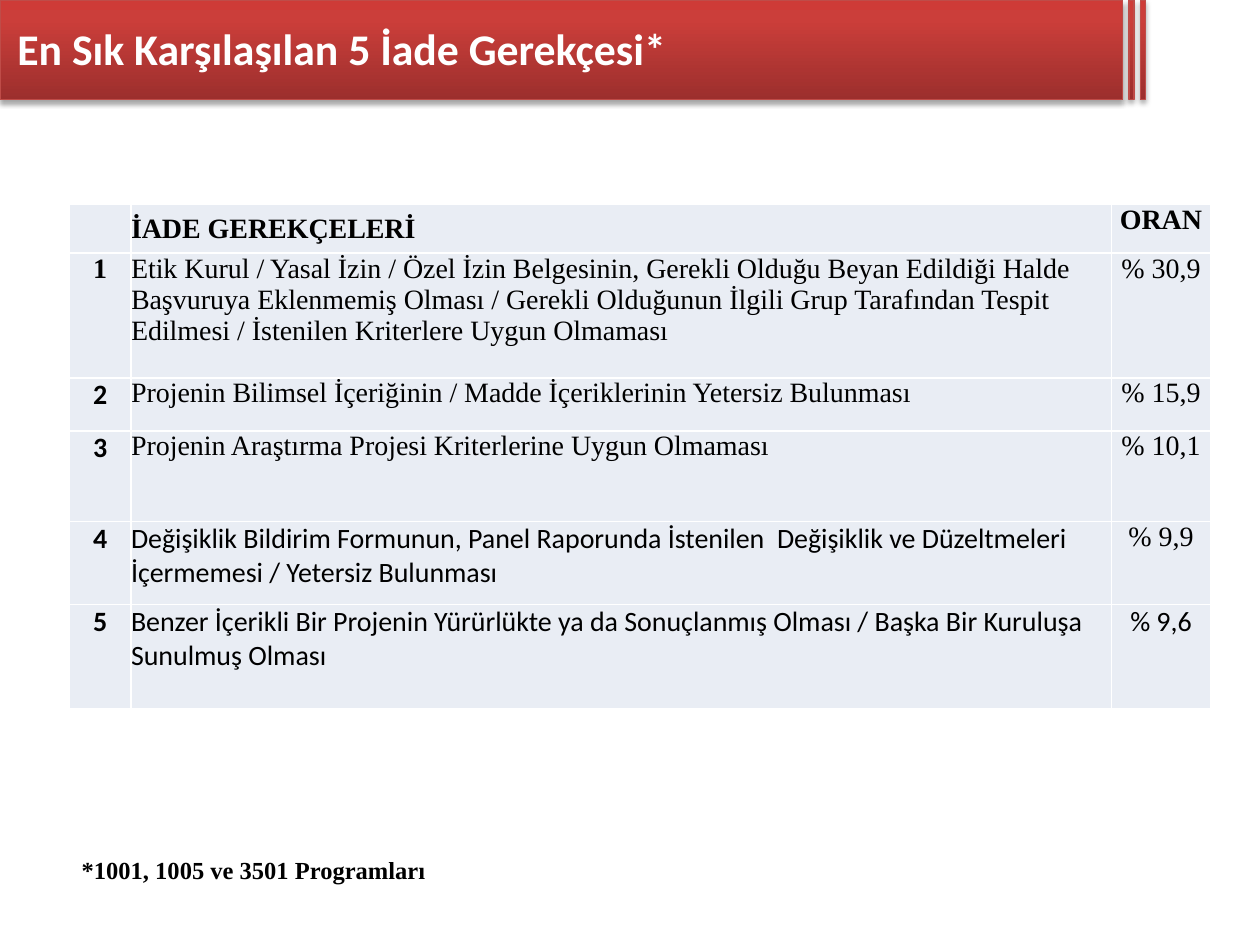
import pptx
import pptx.dml.color
import pptx.enum.shapes
import pptx.enum.text
import pptx.oxml
import pptx.oxml.ns
import pptx.util

Inches = pptx.util.Inches
Pt = pptx.util.Pt
Align = pptx.enum.text.PP_ALIGN
Anchor = pptx.enum.text.MSO_ANCHOR

THEME = {
    "sans": "Calibri", "serif": "Times New Roman",
    "title_size": 25, "table_size": 16, "note_size": 14,
    "title_color": "FFFFFF", "text_color": "000000",
    "cell_fill": "E9EDF4", "border": "FFFFFF", "band_line": "BF4C48",
    "band_stops": [(0, "9C2F2D"), (80, "CB3E3A"), (100, "CE3B37")],
}
SANS, SERIF = THEME["sans"], THEME["serif"]

# Content: each table cell is (text, font, bold)
TITLE = "En Sık Karşılaşılan 5 İade Gerekçesi*"
NOTE = "*1001, 1005 ve 3501 Programları"
ROWS = [
    [("", SERIF, True), ("İADE GEREKÇELERİ", SERIF, True), ("ORAN", SERIF, True)],
    [("1", SERIF, True),
     ("Etik Kurul / Yasal İzin / Özel İzin Belgesinin, Gerekli Olduğu Beyan Edildiği Halde "
      "Başvuruya Eklenmemiş Olması / Gerekli Olduğunun İlgili Grup Tarafından Tespit "
      "Edilmesi / İstenilen Kriterlere Uygun Olmaması", SERIF, False),
     ("% 30,9", SERIF, False)],
    [("2", SANS, True),
     ("Projenin Bilimsel İçeriğinin / Madde İçeriklerinin Yetersiz Bulunması", SERIF, False),
     ("% 15,9", SERIF, False)],
    [("3", SANS, True),
     ("Projenin Araştırma Projesi Kriterlerine Uygun Olmaması", SERIF, False),
     ("% 10,1", SERIF, False)],
    [("4", SANS, True),
     ("Değişiklik Bildirim Formunun, Panel Raporunda İstenilen  Değişiklik ve Düzeltmeleri "
      "İçermemesi / Yetersiz Bulunması", SANS, False),
     ("% 9,9", SERIF, False)],
    [("5", SANS, True),
     ("Benzer İçerikli Bir Projenin Yürürlükte ya da Sonuçlanmış Olması / Başka Bir Kuruluşa "
      "Sunulmuş Olması", SANS, False),
     ("% 9,6", SANS, False)],
]
COLUMN_WIDTHS = [0.49, 7.78, 0.79]
COLUMN_ALIGNMENTS = [Align.CENTER, Align.LEFT, Align.CENTER]
ROW_HEIGHTS = [0.39, 0.99, 0.42, 0.72, 0.66, 0.83]
BANDS = [(0, 8.91), (8.96, 0.04), (9.05, 0.04)]  # left, width
BAND_HEIGHT = 0.79
LEFT = 0.55


def rgb(value):
    return pptx.dml.color.RGBColor.from_string(value)


def element(xml):
    return pptx.oxml.parse_xml(xml.replace(">", " " + pptx.oxml.ns.nsdecls("a") + ">", 1))


def write(text_frame, text, font, size, color, bold, alignment=Align.LEFT):
    paragraph = text_frame.paragraphs[0]
    paragraph.alignment = alignment
    values = {"name": font, "size": Pt(size), "bold": bold}
    if text:
        target = paragraph.add_run()
        target.text = text
    else:
        target = paragraph
    for name, value in values.items():
        setattr(target.font, name, value)
    target.font.color.rgb = rgb(color)


def add_band(slide, left, width):
    shape = slide.shapes.add_shape(
        pptx.enum.shapes.MSO_SHAPE.RECTANGLE,
        Inches(left), 0, Inches(width), Inches(BAND_HEIGHT))
    shape.line.color.rgb = rgb(THEME["band_line"])
    shape.line.width = Pt(0.75)
    shape.shadow.inherit = False
    properties = shape._element.spPr
    # Three-stop gradient running from bottom to top
    stops = "".join(
        f'<a:gs pos="{position * 1000}"><a:srgbClr val="{color}"/></a:gs>'
        for position, color in THEME["band_stops"])
    properties.find(pptx.oxml.ns.qn("a:prstGeom")).addnext(element(
        f'<a:gradFill><a:gsLst>{stops}</a:gsLst><a:lin ang="16200000" scaled="0"/></a:gradFill>'))
    # Soft shadow below
    properties.find(pptx.oxml.ns.qn("a:effectLst")).append(element(
        f'<a:outerShdw blurRad="{Pt(3.1)}" dist="{Pt(1.8)}" dir="5400000" rotWithShape="0">'
        '<a:srgbClr val="000000"><a:alpha val="35000"/></a:srgbClr></a:outerShdw>'))


def add_text(slide, box, text, font, size, color, anchor):
    frame = slide.shapes.add_textbox(*map(Inches, box)).text_frame
    for name, value in {"word_wrap": True, "vertical_anchor": anchor}.items():
        setattr(frame, name, value)
    write(frame, text, font, size, color, True)


def format_cell(cell, anchor):
    values = {"margin_left": 0, "margin_right": 0, "margin_top": 0,
              "margin_bottom": 0, "vertical_anchor": anchor}
    for name, value in values.items():
        setattr(cell, name, value)
    cell.fill.solid()
    cell.fill.fore_color.rgb = rgb(THEME["cell_fill"])
    properties = cell._tc.get_or_add_tcPr()
    for index, side in enumerate(("lnL", "lnR", "lnT", "lnB")):
        properties.insert(index, element(
            f'<a:{side} w="{Pt(1)}"><a:solidFill><a:srgbClr val="{THEME["border"]}"/>'
            f'</a:solidFill></a:{side}>'))


def add_reason_table(slide):
    table = slide.shapes.add_table(
        len(ROWS), len(COLUMN_WIDTHS), Inches(LEFT), Inches(1.62),
        Inches(sum(COLUMN_WIDTHS)), Inches(sum(ROW_HEIGHTS))).table
    table.first_row = table.horz_banding = False
    for column, width in zip(table.columns, COLUMN_WIDTHS):
        column.width = Inches(width)
    for row_index, (row, height) in enumerate(zip(table.rows, ROW_HEIGHTS)):
        row.height = Inches(height)
        for column_index, (text, font, bold) in enumerate(ROWS[row_index]):
            cell = row.cells[column_index]
            heading = row_index == 0 and column_index == 1
            format_cell(cell, Anchor.MIDDLE if heading else Anchor.TOP)
            write(cell.text_frame, text, font, THEME["table_size"],
                  THEME["text_color"], bold, COLUMN_ALIGNMENTS[column_index])


def main():
    presentation = pptx.Presentation()
    presentation.slide_width, presentation.slide_height = Inches(10), Inches(7.5)
    slide = presentation.slides.add_slide(presentation.slide_layouts[6])

    # Title band
    for left, width in BANDS:
        add_band(slide, left, width)
    add_text(slide, (0.04, 0, 8.5, 0.77), TITLE, SANS,
             THEME["title_size"], THEME["title_color"], Anchor.MIDDLE)

    # Reasons and footnote
    add_reason_table(slide)
    add_text(slide, (LEFT, 6.74, 7.64, 0.34), NOTE, SERIF,
             THEME["note_size"], THEME["text_color"], Anchor.TOP)
    presentation.save("out.pptx")


if __name__ == "__main__":
    main()
